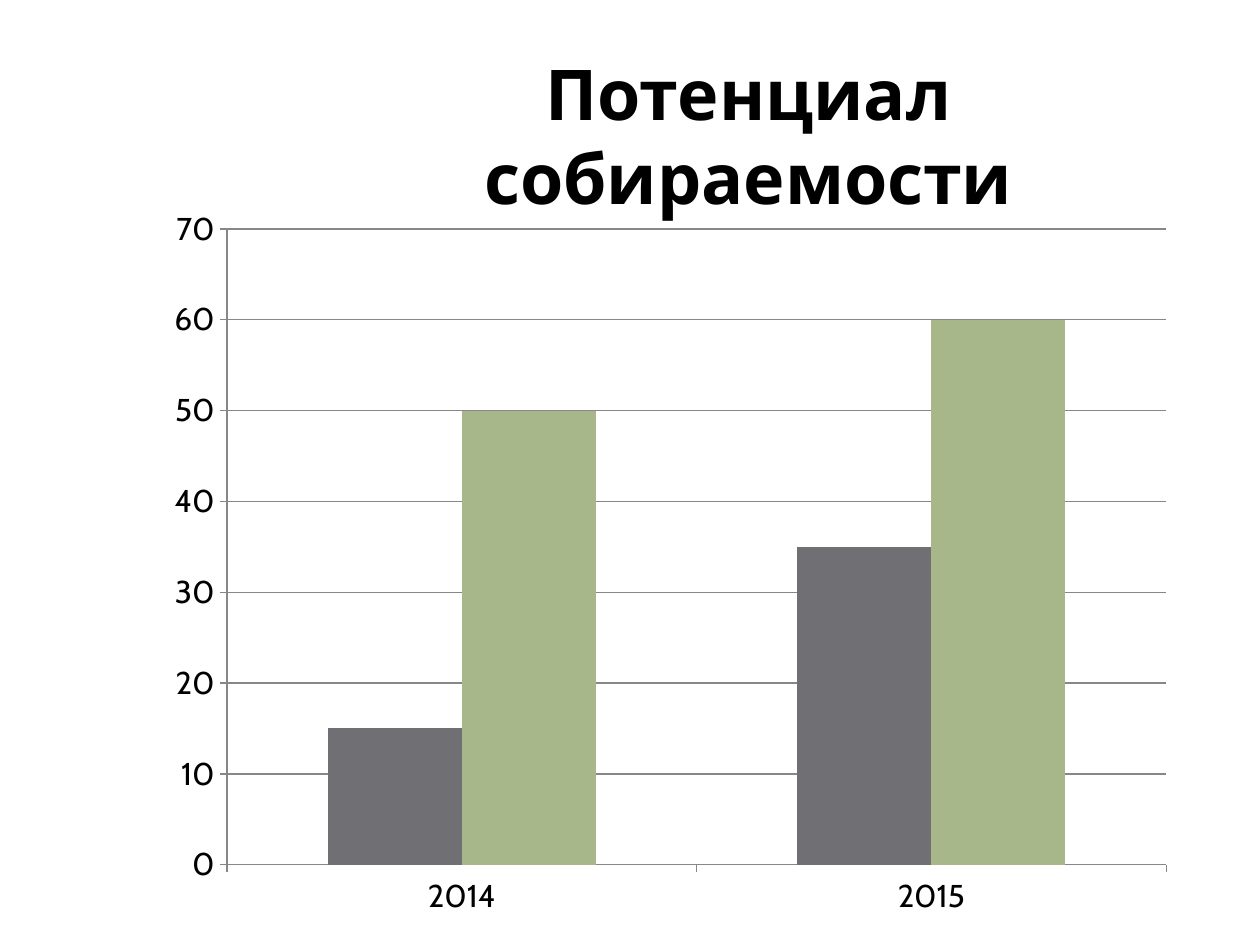
from dataclasses import dataclass

from pptx import Presentation
from pptx.chart.axis import _BaseAxis
from pptx.chart.data import CategoryChartData
from pptx.chart.series import BarSeries
from pptx.dml.color import RGBColor
from pptx.dml.line import LineFormat
from pptx.enum.chart import XL_CHART_TYPE, XL_TICK_MARK
from pptx.enum.text import MSO_ANCHOR, PP_ALIGN
from pptx.slide import Slide
from pptx.util import Pt

COLUMNS = XL_CHART_TYPE.COLUMN_CLUSTERED
TICK_OUTSIDE = XL_TICK_MARK.OUTSIDE
TICK_NONE = XL_TICK_MARK.NONE
MIDDLE = MSO_ANCHOR.MIDDLE
CENTER = PP_ALIGN.CENTER

BLACK = RGBColor(0x00, 0x00, 0x00)
AXIS_GRAY = RGBColor(0x87, 0x87, 0x87)
DARK_GRAY = RGBColor(0x6F, 0x6F, 0x74)
SAGE = RGBColor(0xA7, 0xB7, 0x89)

FONT = "Cabin"
YEARS = ("2014", "2015")


@dataclass(frozen=True)
class YearSeries:
    name: str
    values: tuple[int, ...]
    color: RGBColor


SERIES = (
    YearSeries("Series 1", (15, 35), DARK_GRAY),
    YearSeries("Series 2", (50, 60), SAGE),
)


def add_title(page: Slide, text: str) -> None:
    box = page.shapes.add_textbox(Pt(167), Pt(31.7), Pt(521.3), Pt(90))
    frame = box.text_frame
    frame.word_wrap = True
    frame.vertical_anchor = MIDDLE
    para = frame.paragraphs[0]
    para.alignment = CENTER
    span = para.add_run()
    span.text = text
    span.font.name = FONT
    span.font.size = Pt(40)
    span.font.bold = True
    span.font.color.rgb = BLACK


def style_line(line: LineFormat) -> None:
    line.color.rgb = AXIS_GRAY
    line.width = Pt(0.75)


def style_axis(axis: _BaseAxis) -> None:
    axis.major_tick_mark = TICK_OUTSIDE
    axis.minor_tick_mark = TICK_NONE
    style_line(axis.format.line)


def paint_series(series: BarSeries, color: RGBColor) -> None:
    series.invert_if_negative = False
    series.format.fill.solid()
    series.format.fill.fore_color.rgb = color


def add_columns(page: Slide) -> None:
    data = CategoryChartData()
    data.categories = YEARS
    for item in SERIES:
        data.add_series(item.name, item.values)
    frame = page.shapes.add_chart(
        COLUMNS, Pt(87.8), Pt(111.6), Pt(590.4), Pt(419.8), data
    )
    chart = frame.chart
    chart.has_title = False
    chart.has_legend = False
    chart.font.name = FONT
    chart.font.size = Pt(18)
    chart.font.color.rgb = BLACK

    style_axis(chart.category_axis)
    value_axis = chart.value_axis
    style_axis(value_axis)
    value_axis.minimum_scale = 0
    value_axis.maximum_scale = 70
    value_axis.major_unit = 10
    value_axis.has_major_gridlines = True
    style_line(value_axis.major_gridlines.format.line)

    plot = chart.plots[0]
    plot.gap_width = 150
    plot.overlap = 0
    plot.vary_by_categories = False
    for series, item in zip(plot.series, SERIES):
        paint_series(series, item.color)


def main() -> None:
    deck = Presentation()
    deck.slide_width = Pt(720)
    deck.slide_height = Pt(540)
    page = deck.slides.add_slide(deck.slide_layouts[6])
    add_title(page, "Потенциал собираемости")
    add_columns(page)
    deck.save("out.pptx")


if __name__ == "__main__":
    main()
